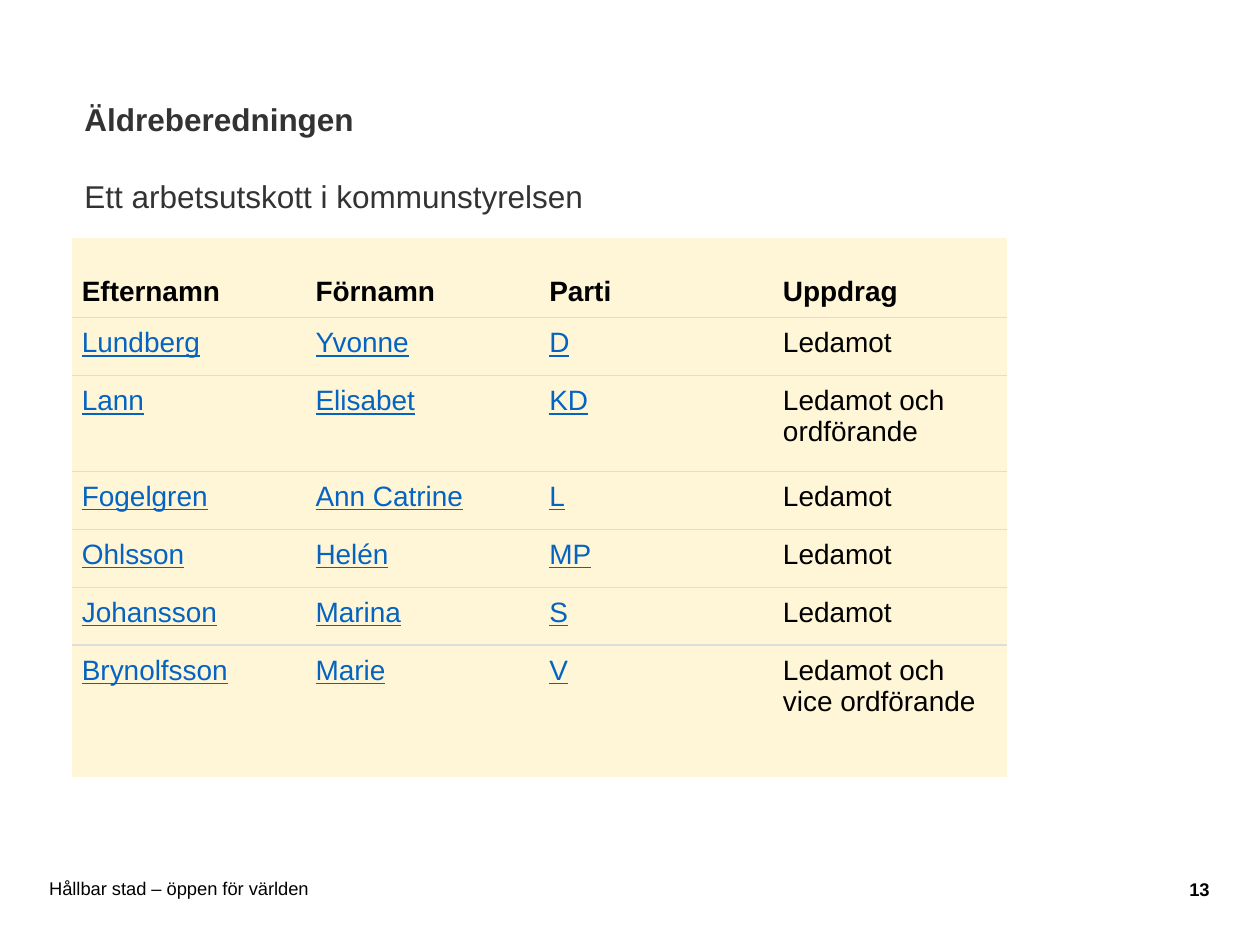
import pptx
import pptx.dml.color
import pptx.enum.text
import pptx.oxml
import pptx.oxml.ns
import pptx.util
from pptx.util import Inches

HEADER = ("Efternamn", "Förnamn", "Parti", "Uppdrag")
MEMBERS = [
    ("Lundberg", "Yvonne", "D", "Ledamot"),
    ("Lann", "Elisabet", "KD", "Ledamot och ordförande"),
    ("Fogelgren", "Ann Catrine", "L", "Ledamot"),
    ("Ohlsson", "Helén", "MP", "Ledamot"),
    ("Johansson", "Marina", "S", "Ledamot"),
    ("Brynolfsson", "Marie", "V", "Ledamot och vice ordförande"),
]
ROW_HEIGHTS = [0.63, 0.46, 0.76, 0.46, 0.46, 0.46, 1.05]
TABLE_WIDTH = 7.42
CELL_INSET = 0.08

ANCHOR = pptx.enum.text.MSO_ANCHOR
ALIGN = pptx.enum.text.PP_ALIGN
TITLE = {"size": 18, "color": "333333"}
LINK = {"size": 16, "color": "0563C1", "underline": True}
BODY = {"size": 16, "color": "000000"}
FOOTER = {"size": 10.5, "color": "000000"}


def rgb(value):
    return pptx.dml.color.RGBColor.from_string(value)


def write(p, text, fmt):
    r = p.add_run()
    r.text = text
    values = {"name": "Arial", "bold": False, **fmt}
    r.font.color.rgb = rgb(values.pop("color"))
    values["size"] = pptx.util.Pt(values["size"])
    for name, value in values.items():
        setattr(r.font, name, value)


def set_insets(target, value):
    for side in ("left", "right", "top", "bottom"):
        setattr(target, f"margin_{side}", Inches(value))


def set_borders(cell, lined):
    """Rule the sides named in lined and hide the others."""
    tc_pr = cell._tc.get_or_add_tcPr()
    for side in "LRTB":
        paint = '<a:solidFill><a:srgbClr val="DDDDDD"/></a:solidFill>' if side in lined else "<a:noFill/>"
        tc_pr.append(pptx.oxml.parse_xml(
            f'<a:ln{side} {pptx.oxml.ns.nsdecls("a")} w="9525">{paint}</a:ln{side}>'))


def add_title(s):
    title = s.shapes.title
    title.left, title.top, title.width, title.height = map(Inches, (0.57, 0.74, 7.22, 1.01))
    tf = title.text_frame
    tf.auto_size = pptx.enum.text.MSO_AUTO_SIZE.NONE
    tf.vertical_anchor = ANCHOR.TOP
    write(tf.paragraphs[0], "Äldreberedningen", {**TITLE, "bold": True})
    p = tf.add_paragraph()
    p.space_before = pptx.util.Pt(22.5)
    write(p, "Ett arbetsutskott i kommunstyrelsen", TITLE)
    for p in tf.paragraphs:
        p.alignment = ALIGN.LEFT


def add_members(s):
    rows = [HEADER] + MEMBERS
    frame = s.shapes.add_table(len(rows), len(HEADER), Inches(0.57), Inches(1.89),
                               Inches(TABLE_WIDTH), Inches(sum(ROW_HEIGHTS)))
    table = frame.table
    table.first_row = table.horz_banding = False
    for column in table.columns:
        column.width = Inches(TABLE_WIDTH / len(HEADER))
    last = len(rows) - 1
    for i, (texts, height) in enumerate(zip(rows, ROW_HEIGHTS)):
        table.rows[i].height = Inches(height)
        lined = ("T" if i > 0 else "") + ("B" if i < last else "")
        for j, text in enumerate(texts):
            cell = table.cell(i, j)
            set_insets(cell, CELL_INSET)
            set_borders(cell, lined)
            cell.fill.solid()
            cell.fill.fore_color.rgb = rgb("FFF5D7")
            cell.vertical_anchor = ANCHOR.TOP if i else ANCHOR.BOTTOM
            if i == 0:
                fmt = {**BODY, "bold": True}
            else:
                fmt = LINK if j < len(HEADER) - 1 else BODY
            write(cell.text_frame.paragraphs[0], text, fmt)


def add_footer(s, box, text, fmt, alignment):
    tf = s.shapes.add_textbox(*map(Inches, box)).text_frame
    tf.word_wrap = True
    tf.vertical_anchor = ANCHOR.MIDDLE
    set_insets(tf, 0)
    tf.paragraphs[0].alignment = alignment
    write(tf.paragraphs[0], text, fmt)


def main():
    prs = pptx.Presentation()
    prs.slide_width, prs.slide_height = Inches(10), Inches(7.5)
    s = prs.slides.add_slide(prs.slide_layouts[5])
    add_title(s)
    add_members(s)
    add_footer(s, (0.39, 6.97, 7.09, 0.16), "Hållbar stad – öppen för världen", FOOTER, ALIGN.LEFT)
    add_footer(s, (9.12, 6.98, 0.48, 0.16), "13", {**FOOTER, "bold": True}, ALIGN.RIGHT)
    prs.save("out.pptx")


if __name__ == "__main__":
    main()
